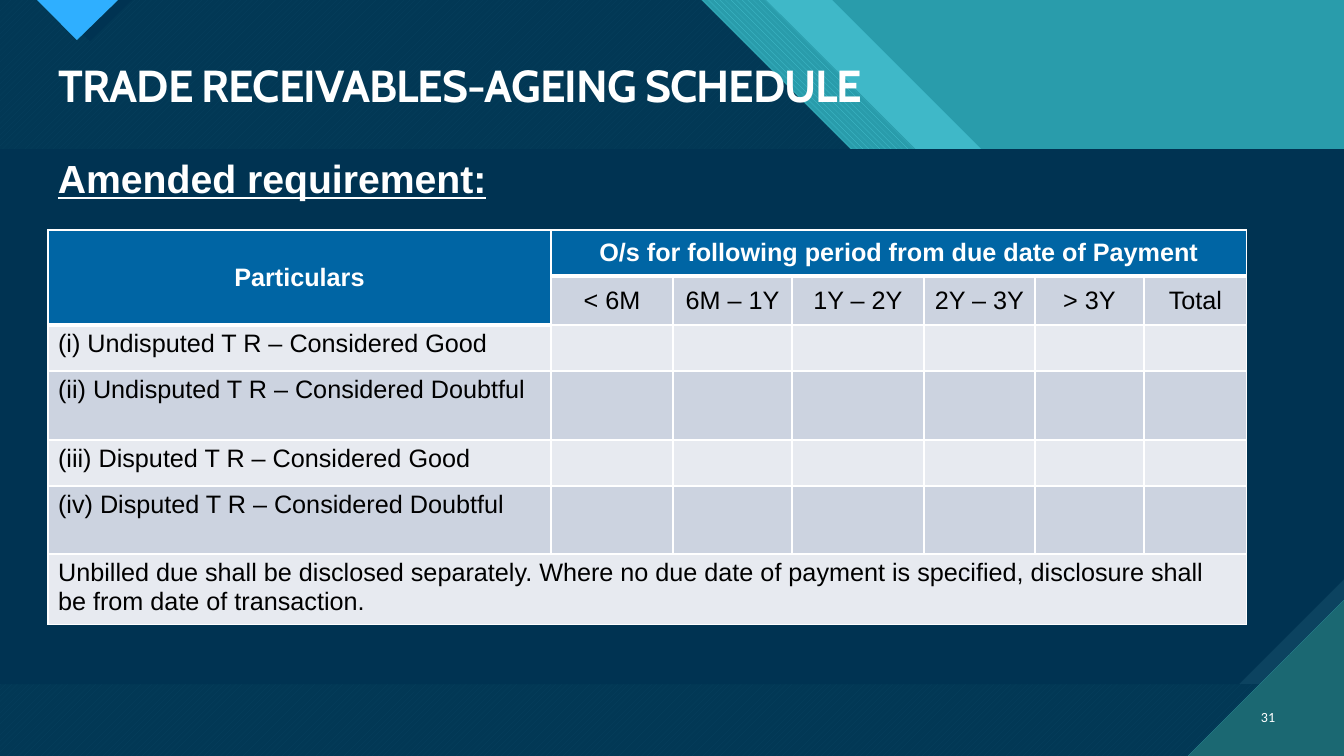
"""Build the trade receivables ageing schedule slide."""
from dataclasses import dataclass

from lxml.etree import SubElement
from pptx import Presentation
from pptx.dml.color import RGBColor
from pptx.enum.dml import MSO_PATTERN as Pattern
from pptx.enum.text import MSO_ANCHOR as Anchor, PP_ALIGN as Align
from pptx.oxml import parse_xml
from pptx.oxml.ns import qn
from pptx.util import Emu, Pt

EMU_PER_PX = 914400 / 100.8
DRAWING_NS = "http://schemas.openxmlformats.org/drawingml/2006/main"
COLORS = {
    "teal": "299CAB", "aqua": "47C3D3", "navy": "003352", "pine": "1B6872",
    "sky": "2FAFFF", "steel": "0C4360", "header": "0065A4",
    "band_dark": "CCD3E0", "band_light": "E7EAF0",
    "white": "FFFFFF", "black": "000000",
}


@dataclass(frozen=True)
class Panel:
    points: tuple[tuple[int, int], ...]
    color: str
    back: str = ""
    pattern: Pattern | None = None
    opacity: int = 100


NAVY_FIELD = ((0, 0), (701, 0), (1000, 299), (1127, 299), (1344, 516), (1344, 756), (0, 756))
PANELS = (
    Panel(((0, 0), (832, 0), (1131, 299), (1244, 299), (1344, 399), (1344, 756), (0, 756)),
          "aqua", opacity=74),
    Panel(((67, 0), (766, 0), (1066, 299), (1193, 299), (1344, 450), (1344, 756), (67, 756)),
          "aqua", "teal", Pattern.WIDE_DOWNWARD_DIAGONAL),
    Panel(NAVY_FIELD, "aqua", "pine", Pattern.WIDE_UPWARD_DIAGONAL),
    Panel(NAVY_FIELD, "navy", opacity=90),
    Panel(((48, 0), (132, 0), (90, 41)), "navy"),
    Panel(((37, 0), (118, 0), (77, 40)), "sky", "pine", Pattern.DARK_HORIZONTAL),
    Panel(((0, 149), (1344, 149), (1344, 684), (0, 684)),
          "steel", "pine", Pattern.DARK_VERTICAL),
    Panel(((0, 149), (1344, 149), (1344, 579), (1239, 684), (0, 684)), "navy"),
    Panel(((1188, 756), (1344, 756), (1344, 600)), "pine", "aqua", Pattern.DARK_HORIZONTAL),
)

COLUMN_WIDTHS = (503, 122, 119, 132, 111, 109, 103)
ROW_HEIGHTS = (46, 49, 46, 69, 46, 68, 67)
PERIODS = ("< 6M", "6M – 1Y", "1Y – 2Y", "2Y – 3Y", "> 3Y", "Total")
SCHEDULE = (
    ("Particulars", "O/s for following period from due date of Payment"),
    ("", *PERIODS),
    ("(i) Undisputed T R – Considered Good",),
    ("(ii) Undisputed T R – Considered Doubtful",),
    ("(iii) Disputed T R – Considered Good",),
    ("(iv) Disputed T R – Considered Doubtful",),
    ("Unbilled due shall be disclosed separately. Where no due date of payment is "
     "specified, disclosure shall be from date of transaction.",),
)


def px(length: int) -> Emu:
    return Emu(round(length * EMU_PER_PX))


def rgb(color: str) -> RGBColor:
    return RGBColor.from_string(COLORS[color])


def write(frame, text: str, *, size: int = 18, font: str = "Arial", color: str = "white",
          bold: bool = False, underline: bool = False, align: Align = Align.LEFT,
          line_spacing: float = 1.0, tracking: int = 0) -> None:
    paragraph = frame.paragraphs[0]
    paragraph.alignment = align
    paragraph.line_spacing = line_spacing
    run = paragraph.add_run()
    run.text = text
    run.font.size, run.font.name = Pt(size), font
    run.font.bold, run.font.underline = bold, underline
    run.font.color.rgb = rgb(color)
    if tracking:
        run.font._element.set("spc", str(tracking))


def add_label(slide, box: tuple[int, int, int, int], text: str,
              anchor: Anchor = Anchor.TOP, **style) -> None:
    frame = slide.shapes.add_textbox(*map(px, box)).text_frame
    frame.word_wrap = True
    frame.vertical_anchor = anchor
    write(frame, text, **style)


def add_panel(slide, panel: Panel) -> None:
    start, *rest = panel.points
    builder = slide.shapes.build_freeform(*start, scale=EMU_PER_PX)
    builder.add_line_segments(rest, close=True)
    shape = builder.convert_to_shape()
    shape.shadow.inherit = False
    shape.line.fill.background()
    if panel.pattern is not None:
        shape.fill.patterned()
        shape.fill.pattern = panel.pattern
        shape.fill.back_color.rgb = rgb(panel.back)
    else:
        shape.fill.solid()
    shape.fill.fore_color.rgb = rgb(panel.color)
    if panel.opacity < 100:
        solid = shape._element.spPr.find(qn("a:solidFill"))
        SubElement(solid[0], qn("a:alpha"), val=str(panel.opacity * 1000))


def set_borders(cell, top: int, bottom: int) -> None:
    properties = cell._tc.get_or_add_tcPr()
    sides = (("lnL", 1), ("lnR", 1), ("lnT", top), ("lnB", bottom))
    for position, (side, points) in enumerate(sides):
        properties.insert(position, parse_xml(
            f'<a:{side} xmlns:a="{DRAWING_NS}" w="{Pt(points)}"><a:solidFill>'
            f'<a:srgbClr val="{COLORS["white"]}"/></a:solidFill></a:{side}>'))


def add_schedule(slide) -> None:
    table = slide.shapes.add_table(
        len(ROW_HEIGHTS), len(COLUMN_WIDTHS), px(48), px(230),
        px(sum(COLUMN_WIDTHS)), px(sum(ROW_HEIGHTS))).table
    for column, width in zip(table.columns, COLUMN_WIDTHS):
        column.width = px(width)
    for row, height in zip(table.rows, ROW_HEIGHTS):
        row.height = px(height)

    for r, texts in enumerate(SCHEDULE):
        for c in range(len(COLUMN_WIDTHS)):
            cell = table.cell(r, c)
            header_rows = 2 if c == 0 else 1
            is_header = r < header_rows
            cell.fill.solid()
            cell.fill.fore_color.rgb = rgb(
                "header" if is_header else "band_dark" if r % 2 else "band_light")
            set_borders(cell, top=3 if r == header_rows else 1, bottom=3 if is_header else 1)
            if r < 2:
                cell.vertical_anchor = Anchor.MIDDLE
            if c < len(texts) and texts[c]:
                write(cell.text_frame, texts[c], bold=is_header,
                      color="white" if is_header else "black",
                      align=Align.CENTER if r < 2 else Align.LEFT)

    last = len(COLUMN_WIDTHS) - 1
    table.cell(0, 0).merge(table.cell(1, 0))
    table.cell(0, 1).merge(table.cell(0, last))
    table.cell(6, 0).merge(table.cell(6, last))


def main() -> None:
    deck = Presentation()
    deck.slide_width, deck.slide_height = px(1344), px(756)
    slide = deck.slides.add_slide(deck.slide_layouts[6])
    slide.background.fill.solid()
    slide.background.fill.fore_color.rgb = rgb("teal")
    for panel in PANELS:
        add_panel(slide, panel)
    add_label(slide, (49, 59, 1236, 59), "TRADE RECEIVABLES-AGEING SCHEDULE",
              size=32, font="Cabin", bold=True, line_spacing=0.9, tracking=-70)
    add_label(slide, (1241, 697, 44, 40), "31", Anchor.MIDDLE,
              size=10, font="Calibri", align=Align.RIGHT)
    add_label(slide, (48, 155, 1237, 60), "Amended requirement:",
              size=28, bold=True, underline=True, line_spacing=0.9)
    add_schedule(slide)
    deck.save("out.pptx")


if __name__ == "__main__":
    main()
